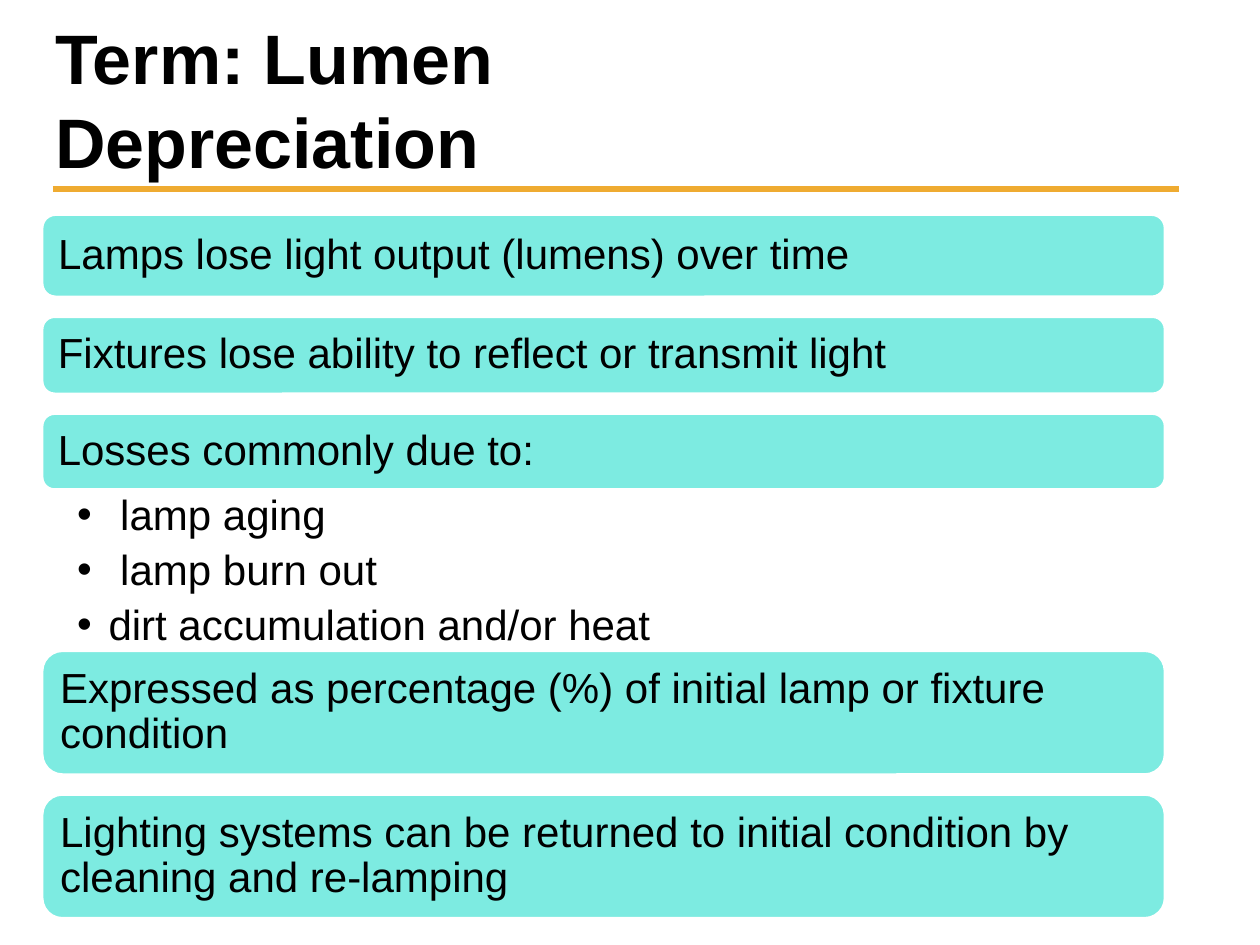
from lxml import etree
from pptx import Presentation
from pptx.dml.color import RGBColor
from pptx.enum import shapes, text
from pptx.oxml.ns import qn
from pptx.util import Pt

TITLE = "Term: Lumen Depreciation"
CARDS = [
    ("Lamps lose light output (lumens) over time", 47.5),
    ("Fixtures lose ability to reflect or transmit light", 44.6),
    ("Losses commonly due to:", 43.9),
    ("Expressed as percentage (%) of initial lamp or fixture condition", 71.3),
    ("Lighting systems can be returned to initial condition by cleaning and re-lamping", 71.3),
]
LOSSES = [("lamp aging", 24.7), ("lamp burn out", 24.7), ("dirt accumulation and/or heat", 18)]
LOSSES_AFTER = 2
LEFT, TOP, WIDTH, GAP, LOSSES_H = 23.8, 122.4, 642.2, 10.8, 91.6


def color(fmt, value):
    fmt.rgb = RGBColor.from_string(value)


def place(sp, left, top, width, height):
    sp.left, sp.top, sp.width, sp.height = Pt(left), Pt(top), Pt(width), Pt(height)


def frame(sp, anchor, left, top, right, bottom):
    tf = sp.text_frame
    tf.word_wrap = True
    tf.auto_size = text.MSO_AUTO_SIZE.NONE
    tf.vertical_anchor = anchor
    tf.margin_left, tf.margin_top = Pt(left), Pt(top)
    tf.margin_right, tf.margin_bottom = Pt(right), Pt(bottom)
    return tf


def write(p, words, size=24, bold=False, spacing=0.9, after=0):
    p.alignment = text.PP_ALIGN.LEFT
    p.line_spacing = spacing
    p.space_before, p.space_after = Pt(0), Pt(after)
    r = p.add_run()
    r.text = words
    r.font.name, r.font.size, r.font.bold = "Arial", Pt(size), bold
    color(r.font.color, "000000")


def add_card(s, words, top, height):
    sp = s.shapes.add_shape(shapes.MSO_SHAPE.ROUNDED_RECTANGLE,
                            Pt(LEFT), Pt(top), Pt(WIDTH), Pt(height))
    sp.shadow.inherit = False
    sp.fill.solid()
    color(sp.fill.fore_color, "7DEBE1")
    color(sp.line.color, "FFFFFF")
    sp.line.width = Pt(2)
    tf = frame(sp, text.MSO_ANCHOR.MIDDLE, 7.2, 7.2, 7.2, 7.2)
    write(tf.paragraphs[0], words)


def fill_losses(sp, top):
    place(sp, LEFT, top, WIDTH, LOSSES_H)
    tf = frame(sp, text.MSO_ANCHOR.TOP, 20.2, 2.2, 13.7, 2.2)
    for i, (words, indent) in enumerate(LOSSES):
        p = tf.add_paragraph() if i else tf.paragraphs[0]
        pPr = p._p.get_or_add_pPr()
        pPr.set("marL", str(Pt(indent)))
        pPr.set("indent", str(-Pt(indent)))
        etree.SubElement(pPr, qn("a:buFont")).set("typeface", "Arial")
        etree.SubElement(pPr, qn("a:buChar")).set("char", "•")
        write(p, words, after=5.5)


prs = Presentation()
prs.slide_width, prs.slide_height = Pt(720), Pt(540)
s = prs.slides.add_slide(prs.slide_layouts[1])
title, body = s.placeholders

place(title, 24.5, 12.2, 510, 88.6)
tf = frame(title, text.MSO_ANCHOR.MIDDLE, 7.2, 3.6, 7.2, 3.6)
write(tf.paragraphs[0], TITLE, size=40, bold=True, spacing=1.0)

rule = s.shapes.add_connector(shapes.MSO_CONNECTOR.STRAIGHT, Pt(30.2), Pt(108), Pt(673.9), Pt(108))
color(rule.line.color, "EFAB31")
rule.line.width = Pt(4)
etree.SubElement(rule._element.spPr, qn("a:effectLst"))

top = TOP
for i, (words, height) in enumerate(CARDS):
    add_card(s, words, top, height)
    top += height
    if i == LOSSES_AFTER:
        fill_losses(body, top)
        top += LOSSES_H
    else:
        top += GAP

prs.save("out.pptx")
